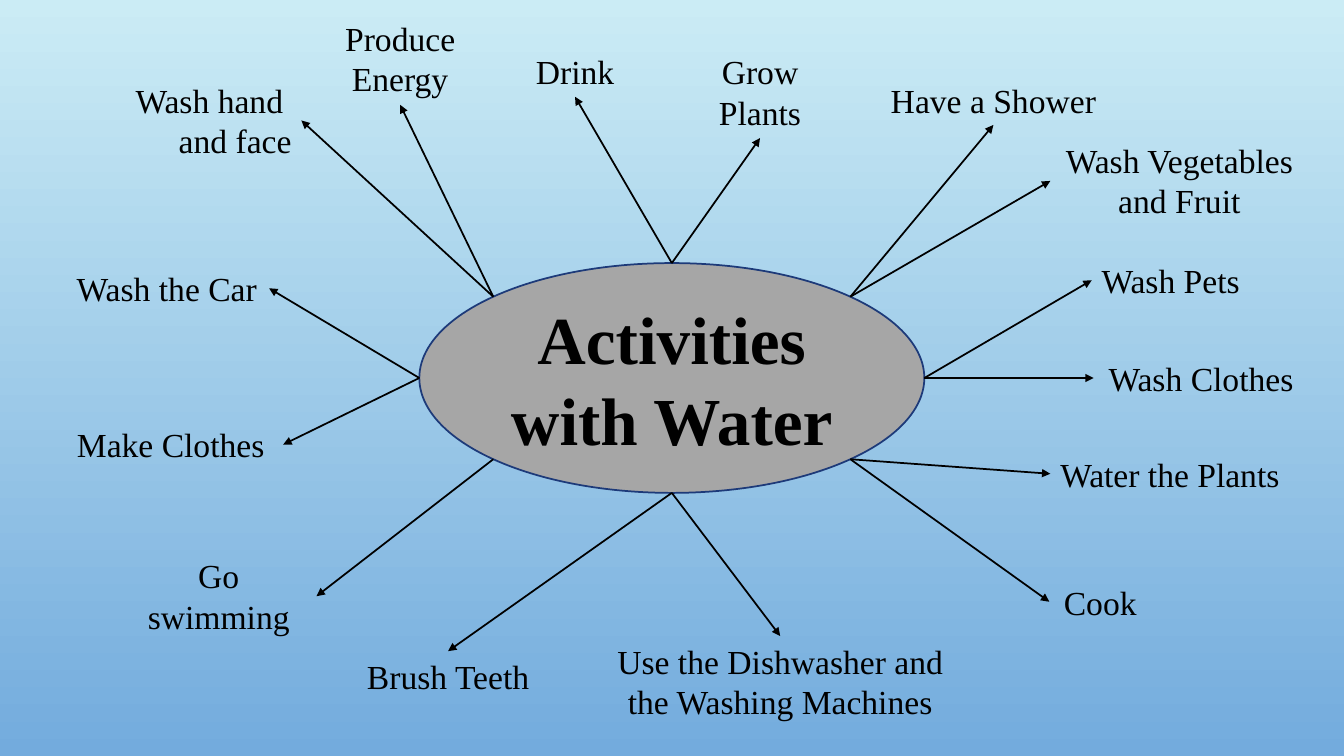
from math import cos, radians, sin

from lxml.etree import SubElement
from pptx import Presentation
from pptx.dml.color import RGBColor
from pptx.enum.shapes import MSO_CONNECTOR as CONNECTOR, MSO_SHAPE as SHAPE
from pptx.enum.text import MSO_ANCHOR as ANCHOR, MSO_AUTO_SIZE as AUTO_SIZE, PP_ALIGN as ALIGN
from pptx.oxml.ns import qn
from pptx.util import Inches, Pt

PX = Inches(1) // 100
FONT = "Times New Roman"
BLACK = "000000"
SKY, SEA = "CBECF5", "73ABDD"
TOP, LEFT, BOTTOM, RIGHT = range(4)

TOPIC = "Activities with Water"
TOPIC_BOX = (416, 261, 501, 228)

# text, left, top, width, lines, alignment, side the arrow meets, angle of its start on the ellipse
ACTIVITIES = [
    ("Wash hand \nand face", 105, 74, 194, 2, ALIGN.RIGHT, RIGHT, 225),
    ("Produce Energy", 314, 13, 166, 2, ALIGN.CENTER, BOTTOM, 225),
    ("Drink", 495, 46, 151, 1, ALIGN.CENTER, BOTTOM, 270),
    ("Grow Plants", 662, 46, 184, 2, ALIGN.CENTER, BOTTOM, 270),
    ("Have a Shower", 854, 74, 263, 1, ALIGN.CENTER, BOTTOM, 315),
    ("Wash Vegetables and Fruit", 1042, 134, 256, 2, ALIGN.CENTER, LEFT, 315),
    ("Wash Pets", 1083, 253, 190, 1, ALIGN.LEFT, LEFT, 0),
    ("Wash Clothes", 1085, 350, 213, 1, ALIGN.CENTER, LEFT, 0),
    ("Water the Plants", 1042, 445, 269, 1, ALIGN.LEFT, LEFT, 45),
    ("Cook", 1041, 572, 101, 1, ALIGN.CENTER, LEFT, 45),
    ("Use the Dishwasher and the Washing Machines", 601, 631, 346, 2, ALIGN.CENTER, TOP, 90),
    ("Brush Teeth", 351, 646, 187, 1, ALIGN.CENTER, TOP, 90),
    ("Go swimming", 120, 546, 194, 2, ALIGN.CENTER, RIGHT, 135),
    ("Make Clothes ", 66, 416, 215, 1, ALIGN.CENTER, RIGHT, 180),
    ("Wash the Car", 64, 261, 203, 1, ALIGN.CENTER, RIGHT, 180),
]
LABEL_HEIGHT = {1: 50, 2: 91}


def px(*lengths):
    return [round(length * PX) for length in lengths]


def color(hex_string):
    return RGBColor.from_string(hex_string)


def write(frame, text, size, align, bold=False):
    frame.word_wrap = True
    frame.text = text
    for paragraph in frame.paragraphs:
        paragraph.alignment = align
        font = paragraph.font
        font.name, font.size, font.bold = FONT, Pt(size), bold
        font.color.rgb = color(BLACK)


def ellipse_point(degrees):
    left, top, width, height = TOPIC_BOX
    angle = radians(degrees)
    return px(left + width / 2 * (1 + cos(angle)), top + height / 2 * (1 + sin(angle)))


def add_label(slide, text, left, top, width, lines, align):
    label = slide.shapes.add_textbox(*px(left, top, width, LABEL_HEIGHT[lines]))
    write(label.text_frame, text, 24, align)
    label.text_frame.auto_size = AUTO_SIZE.SHAPE_TO_FIT_TEXT
    return label


def add_arrow(slide, degrees, label, side):
    start = ellipse_point(degrees)
    arrow = slide.shapes.add_connector(CONNECTOR.STRAIGHT, *start, *start)
    arrow.end_connect(label, side)
    arrow.line.color.rgb = color(BLACK)
    arrow.line.width = Pt(1.25)
    SubElement(arrow.line._get_or_add_ln(), qn("a:tailEnd"), type="triangle")
    SubElement(arrow._element.spPr, qn("a:effectLst"))


def add_topic(slide):
    topic = slide.shapes.add_shape(SHAPE.OVAL, *px(*TOPIC_BOX))
    topic.shadow.inherit = False
    topic.fill.solid()
    topic.fill.fore_color.rgb = color("A6A6A6")
    topic.line.color.rgb = color("1D3A79")
    topic.line.width = Pt(1.25)
    topic.text_frame.vertical_anchor = ANCHOR.MIDDLE
    write(topic.text_frame, TOPIC, 48, ALIGN.CENTER, bold=True)


def main():
    deck = Presentation()
    deck.slide_width, deck.slide_height = Inches(13.333), Inches(7.5)
    slide = deck.slides.add_slide(deck.slide_layouts[6])

    backdrop = slide.background.fill
    backdrop.gradient()
    backdrop.gradient_angle = 270
    for stop, shade in zip(backdrop.gradient_stops, (SKY, SEA)):
        stop.color.rgb = color(shade)

    add_topic(slide)
    for *label_spec, side, degrees in ACTIVITIES:
        add_arrow(slide, degrees, add_label(slide, *label_spec), side)
    deck.save("out.pptx")


if __name__ == "__main__":
    main()
